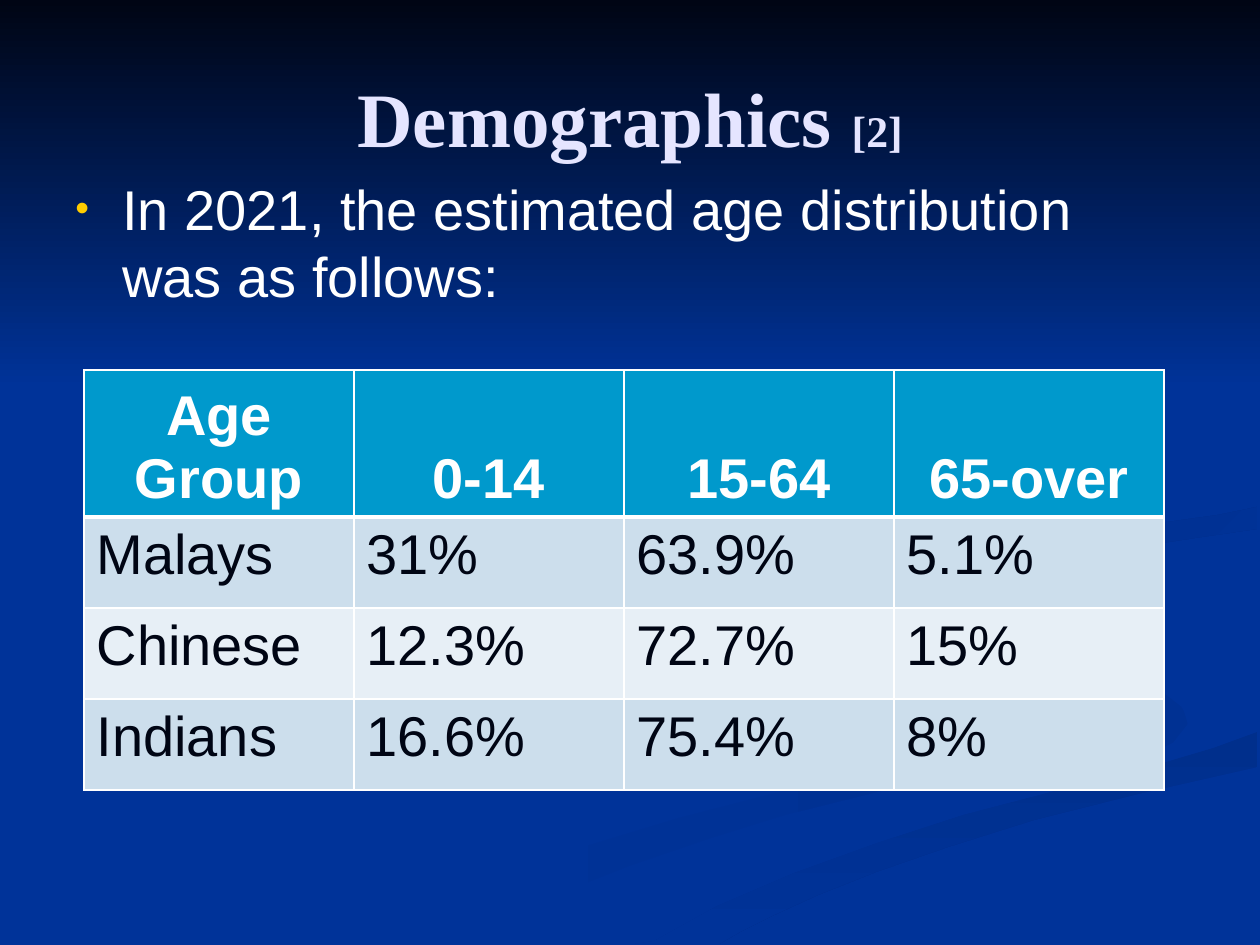
from lxml.etree import SubElement
from pptx import Presentation
from pptx.dml.color import RGBColor
from pptx.enum.shapes import MSO_SHAPE
from pptx.enum.text import MSO_ANCHOR, PP_ALIGN
from pptx.oxml.ns import qn
from pptx.util import Emu, Pt

PX = 914400 / 126
WIDTH, HEIGHT = 1260, 945

NIGHT = RGBColor(0x00, 0x05, 0x14)
BLUE = RGBColor(0x00, 0x33, 0x99)
SHADE = RGBColor(0x00, 0x2F, 0x8C)
SOFT_SHADE = RGBColor(0x00, 0x31, 0x93)
LAVENDER = RGBColor(0xE5, 0xE5, 0xFF)
WHITE = RGBColor(0xFF, 0xFF, 0xFF)
GOLD = RGBColor(0xFF, 0xCC, 0x00)
HEADER_FILL = RGBColor(0x00, 0x99, 0xCC)
BAND_FILLS = [RGBColor(0xCC, 0xDE, 0xEC), RGBColor(0xE7, 0xEF, 0xF6)]

AGE_ROWS = [
    ["Age Group", "0-14", "15-64", "65-over"],
    ["Malays", "31%", "63.9%", "5.1%"],
    ["Chinese", "12.3%", "72.7%", "15%"],
    ["Indians", "16.6%", "75.4%", "8%"],
]

# Outlines of the background ribbons, in px
LOWER_RIBBON = [
    (984, 697), (939, 678), (859, 654), (789, 633), (748, 611), (726, 591),
    (724, 578), (718, 592), (732, 610), (770, 629), (856, 654), (934, 679),
    (978, 697), (990, 713), (975, 735), (931, 753), (862, 772), (776, 793),
    (679, 818), (577, 849), (474, 891), (378, 944), (455, 944), (543, 900),
    (629, 866), (711, 838), (785, 815), (881, 791), (953, 774), (990, 757),
    (1008, 732), (1002, 714),
]
CURL = [
    (1188, 718), (1178, 702), (1140, 680), (1071, 660), (998, 641), (939, 617),
    (916, 597), (912, 585), (916, 604), (940, 630), (984, 653), (1056, 675),
    (1109, 692), (1143, 708), (1157, 732), (1143, 752), (1126, 762),
    (1154, 752), (1174, 742), (1186, 732),
]
SHARED_EDGE = [
    (634, 944), (654, 941), (717, 906), (794, 873), (877, 843), (963, 815),
    (1047, 793), (1159, 764), (1213, 748), (1257, 732),
]
SWEEP = SHARED_EDGE + [
    (1257, 767), (1138, 794), (1034, 820), (948, 847), (876, 872), (818, 895),
    (774, 915), (740, 932), (719, 944),
]
MAIN_RIBBON = [
    (914, 585), (925, 609), (956, 627), (1023, 649), (1097, 668), (1159, 689),
    (1183, 708), (1188, 724), (1173, 743), (1137, 760), (1062, 779), (983, 799),
    (887, 825), (780, 862), (663, 912), (601, 944),
] + SHARED_EDGE + [
    (1259, 678), (1208, 669), (1139, 654), (1068, 634), (1013, 611), (988, 591),
    (985, 580), (1008, 557), (1052, 542), (1133, 527), (1220, 515), (1259, 507),
    (1259, 488), (1187, 503), (1101, 514), (1018, 525), (951, 544), (922, 562),
]
UPPER_RIBBON = [
    (984, 580), (990, 597), (1016, 614), (1041, 625), (1019, 610), (1014, 595),
    (1028, 578), (1062, 564), (1129, 548), (1202, 537), (1257, 529), (1257, 507),
    (1218, 515), (1131, 527), (1052, 542), (1007, 557),
]


def px(length):
    return Emu(round(length * PX))


def paint(shape, start, end=None, angle=0):
    """Fill without outline; angle runs clockwise."""
    if end is None:
        shape.fill.solid()
        shape.fill.fore_color.rgb = start
    else:
        shape.fill.gradient()
        shape.fill.gradient_angle = (360 - angle) % 360
        for stop, color in zip(shape.fill.gradient_stops, (start, end)):
            stop.color.rgb = color
    shape.line.fill.background()
    shape.shadow.inherit = False


def add_ribbon(slide, outline, *colors, angle=0):
    builder = slide.shapes.build_freeform(*outline[0], scale=PX)
    builder.add_line_segments(outline[1:], close=True)
    paint(builder.convert_to_shape(), *colors, angle=angle)


def add_run(paragraph, text, size=32, font="Arial", color=WHITE, bold=False):
    run = paragraph.add_run()
    run.text = text
    run.font.size = Pt(size)
    run.font.name = font
    run.font.bold = bold
    run.font.color.rgb = color


def add_frame(slide, left, top, width, height, anchor=MSO_ANCHOR.TOP):
    box = slide.shapes.add_textbox(px(left), px(top), px(width), px(height))
    frame = box.text_frame
    frame.word_wrap = True
    frame.vertical_anchor = anchor
    return frame.paragraphs[0]


def set_bullet(paragraph, indent):
    properties = paragraph._p.get_or_add_pPr()
    properties.set("marL", str(px(indent)))
    properties.set("indent", str(-px(indent)))
    color = SubElement(properties, qn("a:buClr"))
    SubElement(color, qn("a:srgbClr"), val=str(GOLD))
    SubElement(properties, qn("a:buSzPct"), val="70000")
    SubElement(properties, qn("a:buFont"), typeface="Arial")
    SubElement(properties, qn("a:buChar"), char="•")


def set_borders(cell, **widths):
    properties = cell._tc.get_or_add_tcPr()
    for side, width in widths.items():
        line = SubElement(properties, qn(f"a:ln{side}"), w=str(Pt(width)))
        fill = SubElement(line, qn("a:solidFill"))
        SubElement(fill, qn("a:srgbClr"), val=str(WHITE))


def add_age_table(slide, left, top, column_width, header_height, row_height):
    row_count, column_count = len(AGE_ROWS), len(AGE_ROWS[0])
    table = slide.shapes.add_table(
        row_count, column_count, px(left), px(top), px(column_width * column_count),
        px(header_height + row_height * (row_count - 1))).table
    for column in table.columns:
        column.width = px(column_width)
    for r, values in enumerate(AGE_ROWS):
        header = r == 0
        table.rows[r].height = px(header_height if header else row_height)
        for c, value in enumerate(values):
            cell = table.cell(r, c)
            set_borders(cell, L=1, R=1, T=3 if r == 1 else 1, B=3 if header else 1)
            cell.fill.solid()
            cell.fill.fore_color.rgb = HEADER_FILL if header else BAND_FILLS[(r - 1) % 2]
            cell.vertical_anchor = MSO_ANCHOR.BOTTOM if header else MSO_ANCHOR.TOP
            paragraph = cell.text_frame.paragraphs[0]
            paragraph.alignment = PP_ALIGN.CENTER if header else PP_ALIGN.LEFT
            add_run(paragraph, value, color=WHITE if header else NIGHT, bold=header)


def main():
    deck = Presentation()
    deck.slide_width, deck.slide_height = px(WIDTH), px(HEIGHT)
    slide = deck.slides.add_slide(deck.slide_layouts[6])

    # Background with ribbons and a night sky at the top
    slide.background.fill.solid()
    slide.background.fill.fore_color.rgb = BLUE
    add_ribbon(slide, LOWER_RIBBON, BLUE, SOFT_SHADE)
    add_ribbon(slide, CURL, BLUE, SOFT_SHADE, angle=45)
    add_ribbon(slide, SWEEP, SHADE, BLUE, angle=90)
    add_ribbon(slide, MAIN_RIBBON, BLUE)
    add_ribbon(slide, UPPER_RIBBON, SHADE, BLUE, angle=45)
    sky = slide.shapes.add_shape(MSO_SHAPE.RECTANGLE, 0, 0, px(WIDTH), px(388))
    paint(sky, NIGHT, BLUE, angle=90)

    # Title with its reference number
    title = add_frame(slide, 63, 38, 1134, 157, anchor=MSO_ANCHOR.MIDDLE)
    title.alignment = PP_ALIGN.CENTER
    for text, size in (("Demographics ", 44), ("[2]", 25)):
        add_run(title, text, size=size, font="Times New Roman", color=LAVENDER, bold=True)

    # Introduction
    introduction = add_frame(slide, 63, 168, 1134, 677)
    introduction.space_before = Pt(4)
    set_bullet(introduction, 47)
    add_run(introduction, "In 2021, the estimated age distribution was as follows:")

    # Age distribution
    add_age_table(slide, 84, 370, column_width=270, header_height=138, row_height=91)

    deck.save("out.pptx")


if __name__ == "__main__":
    main()
